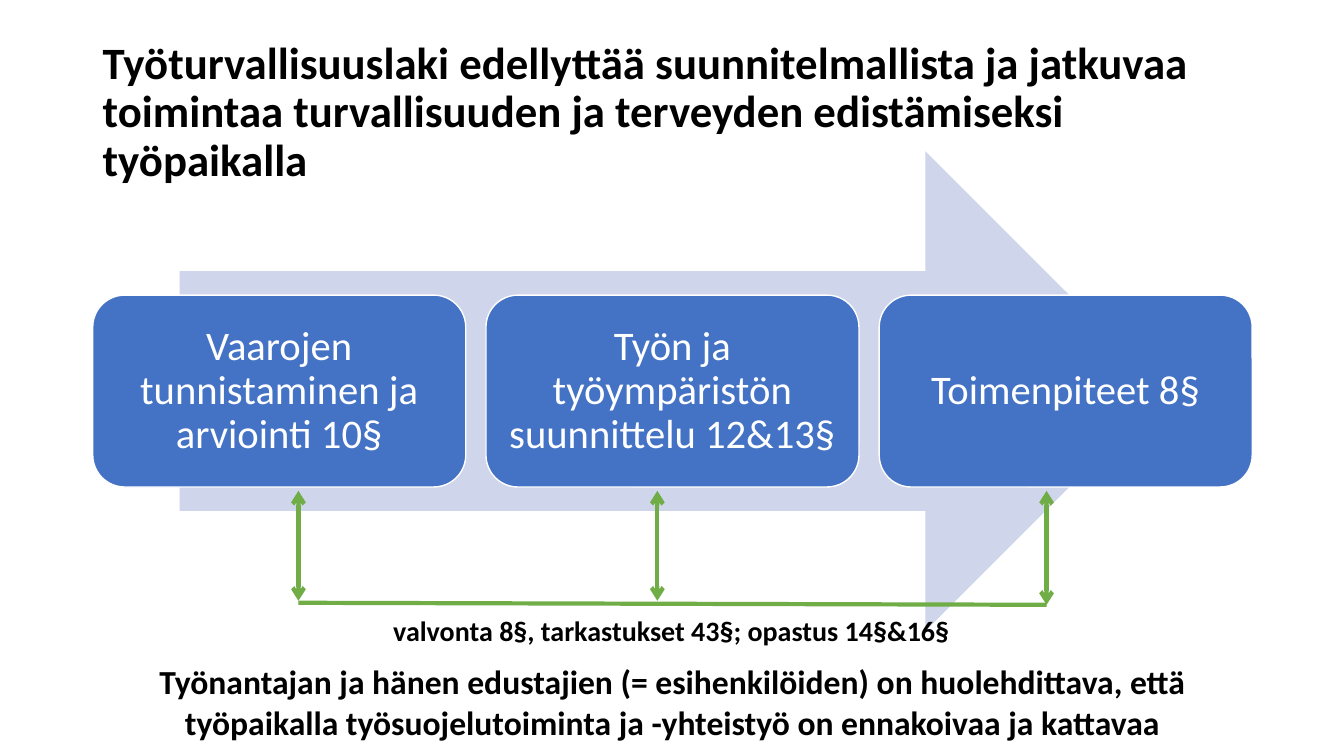
from dataclasses import dataclass

from lxml.etree import SubElement
from pptx import Presentation
from pptx.dml.color import RGBColor
from pptx.enum.shapes import MSO_CONNECTOR, MSO_SHAPE
from pptx.enum.text import MSO_ANCHOR, PP_ALIGN
from pptx.oxml.ns import qn
from pptx.util import Inches, Pt


@dataclass(frozen=True)
class Theme:
    font: str = "Calibri"
    black: RGBColor = RGBColor(0, 0, 0)
    white: RGBColor = RGBColor(255, 255, 255)
    blue: RGBColor = RGBColor(0x44, 0x72, 0xC4)
    pale_blue: RGBColor = RGBColor(0xCF, 0xD5, 0xEA)
    green: RGBColor = RGBColor(0x70, 0xAD, 0x47)
    title_size: int = 32
    step_size: int = 29
    caption_size: int = 20
    duty_size: int = 24
    outline: int = 1
    bracket_line: int = 3


THEME = Theme()
STEPS = [
    "Vaarojen tunnistaminen ja arviointi 10§",
    "Työn ja työympäristön suunnittelu 12&13§",
    "Toimenpiteet 8§",
]


def set_attributes(target, values):
    for name, value in values.items():
        setattr(target, name, value)


def write_text(shape, text, size, color, bold, paragraph_format, anchor, inset=None):
    frame = shape.text_frame
    set_attributes(frame, {"word_wrap": True, "vertical_anchor": anchor})
    if inset is not None:
        sides = ("left", "top", "right", "bottom")
        set_attributes(frame, {f"margin_{side}": Inches(inset) for side in sides})
    paragraph = frame.paragraphs[0]
    set_attributes(paragraph, paragraph_format)
    run = paragraph.add_run()
    run.text = text
    set_attributes(run.font, {"name": THEME.font, "size": Pt(size), "bold": bold})
    run.font.color.rgb = color


def add_preset(slide, preset, box, fill):
    shape = slide.shapes.add_shape(preset, *map(Inches, box))
    shape.shadow.inherit = False
    shape.fill.solid()
    shape.fill.fore_color.rgb = fill
    shape.line.fill.background()
    return shape


def add_line(slide, start, end, arrows=False):
    ends = map(Inches, (*start, *end))
    connector = slide.shapes.add_connector(MSO_CONNECTOR.STRAIGHT, *ends)
    connector.line.color.rgb = THEME.green
    connector.line.width = Pt(THEME.bracket_line)
    properties = connector.line._get_or_add_ln()
    if arrows:
        for tag in ("a:headEnd", "a:tailEnd"):
            SubElement(properties, qn(tag), type="arrow")
    SubElement(properties.getparent(), qn("a:effectLst"))


# Bold text block: title, caption or closing statement
def add_statement(slide, box, text, size, paragraph_format, anchor=MSO_ANCHOR.TOP):
    shape = slide.shapes.add_textbox(*map(Inches, box))
    write_text(shape, text, size, THEME.black, True, paragraph_format, anchor)


# Wide arrow with one rounded box per step
def add_process(slide, box):
    left, top, width, height = box
    arrow_share = 0.85
    arrow_left = left + width * (1 - arrow_share) / 2
    arrow_box = (arrow_left, top, width * arrow_share, height)
    add_preset(slide, MSO_SHAPE.RIGHT_ARROW, arrow_box, THEME.pale_blue)

    step_width, step_height = 3.7, height * 0.4
    pitch = (width - step_width) / (len(STEPS) - 1)
    step_top = top + (height - step_height) / 2
    for index, text in enumerate(STEPS):
        step_box = (left + index * pitch, step_top, step_width, step_height)
        step = add_preset(slide, MSO_SHAPE.ROUNDED_RECTANGLE, step_box, THEME.blue)
        step.line.color.rgb = THEME.white
        step.line.width = Pt(THEME.outline)
        centred = {"alignment": PP_ALIGN.CENTER, "line_spacing": 0.9}
        write_text(step, text, THEME.step_size, THEME.white, False, centred,
                   MSO_ANCHOR.MIDDLE, inset=0.12)


# Base line with a double-headed arrow up to each step
def add_bracket(slide, box):
    left, top, width, height = box
    right, bottom = left + width, top + height
    add_line(slide, (left, bottom - 0.02), (right, bottom))
    for x, gap in ((left, 0.04), (left + 3.56, 0.04), (right, 0)):
        add_line(slide, (x, bottom - gap), (x, top), arrows=True)


def build_slide(presentation):
    slide = presentation.slides.add_slide(presentation.slide_layouts[6])
    add_statement(
        slide, (0.92, 0.4, 11.5, 1.45),
        "Työturvallisuuslaki edellyttää suunnitelmallista ja jatkuvaa toimintaa "
        "turvallisuuden ja terveyden edistämiseksi työpaikalla",
        THEME.title_size, {"line_spacing": 0.9}, MSO_ANCHOR.MIDDLE)
    add_process(slide, (0.92, 1.5, 11.5, 4.76))
    add_bracket(slide, (2.96, 4.87, 7.42, 1.13))
    centred = {"alignment": PP_ALIGN.CENTER}
    add_statement(
        slide, (2.41, 6.04, 8.5, 0.44),
        "valvonta 8§, tarkastukset 43§; opastus 14§&16§",
        THEME.caption_size, centred)
    add_statement(
        slide, (0.92, 6.51, 11.5, 0.91),
        "Työnantajan ja hänen edustajien (= esihenkilöiden) on huolehdittava, että "
        "työpaikalla työsuojelutoiminta ja -yhteistyö on ennakoivaa ja kattavaa",
        THEME.duty_size, centred)


def main():
    presentation = Presentation()
    size = {"slide_width": Inches(13.33), "slide_height": Inches(7.5)}
    set_attributes(presentation, size)
    build_slide(presentation)
    presentation.save("out.pptx")


if __name__ == "__main__":
    main()
